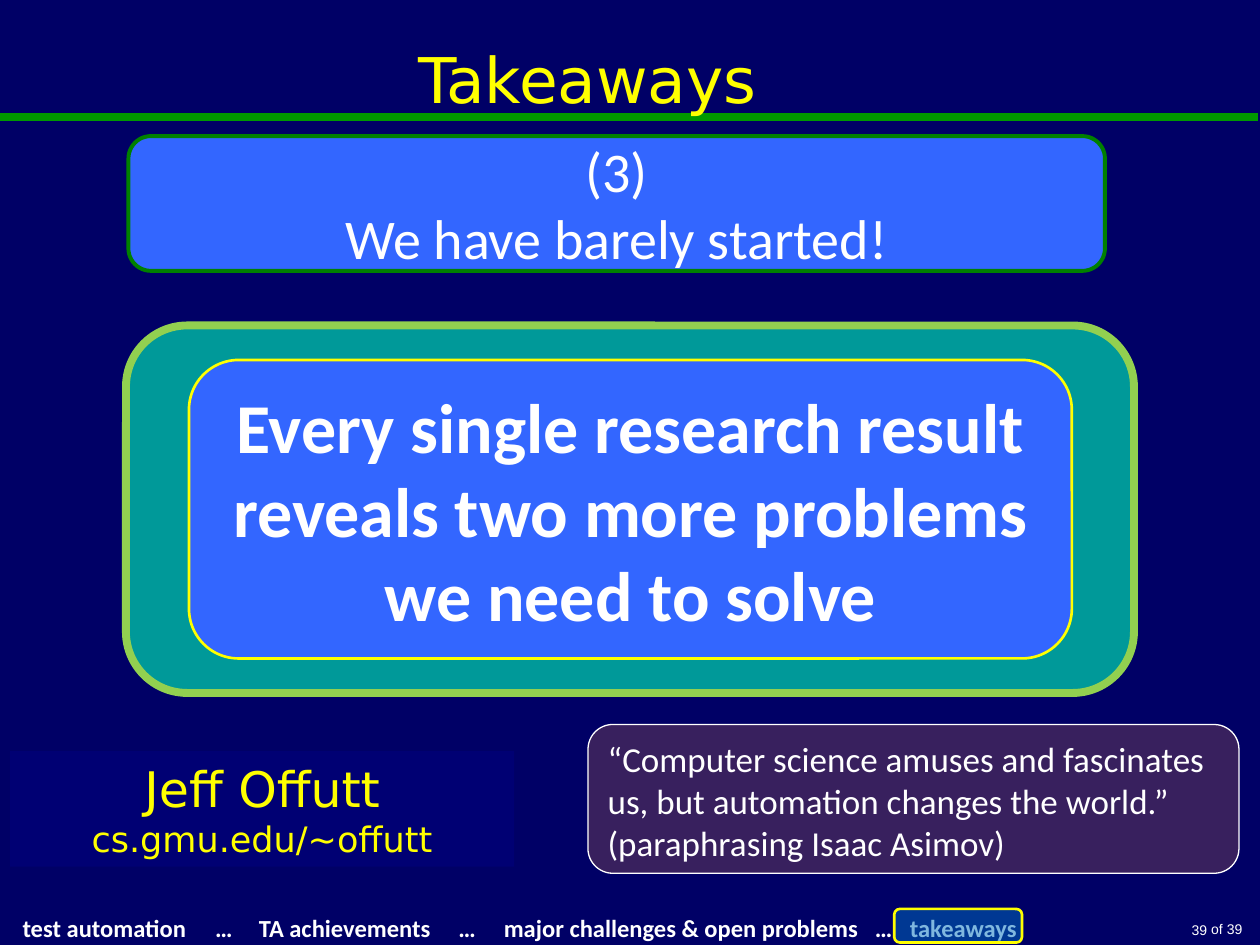
import pptx
import pptx.util
import pptx.dml.color
import pptx.enum.shapes
import pptx.enum.text
import pptx.oxml
import pptx.oxml.ns

Pt = pptx.util.Pt
SHAPE = pptx.enum.shapes.MSO_SHAPE
ALIGN = pptx.enum.text.PP_ALIGN
ANCHOR = pptx.enum.text.MSO_ANCHOR
qn = pptx.oxml.ns.qn


def rgb(color):
    return pptx.dml.color.RGBColor.from_string(color)


def add_xml(parent, tag, **attrs):
    child = parent.makeelement(qn(tag), attrs)
    parent.append(child)
    return child


def write(tf, lines, sizes, font="Calibri", color="FFFFFF", bold=False,
          align=ALIGN.CENTER, anchor=ANCHOR.MIDDLE, tabs=()):
    tf.word_wrap = True
    tf.auto_size = pptx.enum.text.MSO_AUTO_SIZE.NONE
    tf.vertical_anchor = anchor
    for i, (line, size) in enumerate(zip(lines, sizes)):
        p = tf.paragraphs[0] if i == 0 else tf.add_paragraph()
        p.text = line
        p.alignment = align
        if tabs:
            tab_list = add_xml(p._p.get_or_add_pPr(), "a:tabLst")
            for pos in tabs:
                add_xml(tab_list, "a:tab", pos=str(Pt(pos)), algn="l")
        p.font.name = font
        p.font.size = Pt(size)
        p.font.bold = bold
        p.font.color.rgb = rgb(color)


def add_text(s, box, text, size, **style):
    sp = s.shapes.add_textbox(*map(Pt, box))
    write(sp.text_frame, [text], [size], **style)
    return sp


def add_panel(s, box, fill, line=None, width=0, kind=SHAPE.ROUNDED_RECTANGLE):
    sp = s.shapes.add_shape(kind, *map(Pt, box))
    sp.shadow.inherit = False
    sp.fill.solid()
    sp.fill.fore_color.rgb = rgb(fill)
    if line:
        sp.line.color.rgb = rgb(line)
        sp.line.width = Pt(width)
    else:
        sp.line.fill.background()
    return sp


def add_rule(s, y, x_end, color, width):
    line = s.shapes.add_connector(
        pptx.enum.shapes.MSO_CONNECTOR.STRAIGHT, 0, Pt(y), Pt(x_end), Pt(y))
    line.line.color.rgb = rgb(color)
    line.line.width = Pt(width)
    add_xml(line._element.spPr, "a:effectLst")


def add_title(s, box, text):
    sp = s.shapes.title
    sp.left, sp.top, sp.width, sp.height = map(Pt, box)
    write(sp.text_frame, [text], [36], font="DejaVu Sans", color="FFFF00")
    sp._element.getparent().append(sp._element)


def add_footer(s):
    agenda = add_text(
        s, (5.8, 518.4, 582, 24.5),
        "test automation\t…\tTA achievements\t…\t"
        "major challenges & open problems\t…\ttakeaways",
        14, bold=True, align=ALIGN.LEFT, anchor=ANCHOR.TOP,
        tabs=(110, 135, 249, 275, 487, 507))
    agenda.text_frame.word_wrap = False
    add_text(s, (684, 522.7, 33.1, 17.3), "of 39", 8, font="Arial",
             align=ALIGN.RIGHT, anchor=ANCHOR.TOP).text_frame.word_wrap = False
    add_text(s, (566.6, 520.6, 130.3, 19.4), "39", 8, font="Arial",
             align=ALIGN.RIGHT, anchor=ANCHOR.BOTTOM)


def main():
    prs = pptx.Presentation()
    prs.slide_width, prs.slide_height = Pt(720), Pt(540)
    s = prs.slides.add_slide(prs.slide_layouts[5])
    s.background.fill.solid()
    s.background.fill.fore_color.rgb = rgb("000066")

    add_rule(s, 67, 719, "009900", 4.5)
    add_footer(s)
    add_title(s, (5.8, 0, 660, 90), "Takeaways")

    heading = add_panel(s, (73.4, 77.8, 558, 77), "3366FF", "008000", 2.25)
    write(heading.text_frame, ["(3)", "We have barely started!"], [32, 32])

    add_panel(s, (72, 186, 576, 210), "009999", "92D050", 4.5)
    message = add_panel(s, (108, 205.7, 504.5, 170.6), "3366FF", "FFFF00", 1.5)
    write(message.text_frame,
          ["Every single research result reveals two more problems "
           "we need to solve"], [40], bold=True)

    author = add_panel(s, (5.8, 429.3, 288, 66), "000073", kind=SHAPE.RECTANGLE)
    write(author.text_frame, ["Jeff Offutt", "cs.gmu.edu/~offutt"], [28, 20],
          font="DejaVu Sans", color="FFFF00")

    highlight = add_panel(s, (511, 519.4, 73, 19.2), "0070C0", "FFFF00", 1.5)
    color = highlight._element.spPr.find(qn("a:solidFill")).find(qn("a:srgbClr"))
    add_xml(color, "a:alpha", val="50000")

    quote = add_panel(s, (336, 414, 372, 85), "38205E", "FFFFFF", 0.75)
    write(quote.text_frame,
          ["“Computer science amuses and fascinates us, "
           "but automation changes the world.”",
           "(paraphrasing Isaac Asimov)"], [20, 20],
          align=ALIGN.LEFT, anchor=ANCHOR.TOP)

    prs.save("out.pptx")


if __name__ == "__main__":
    main()
